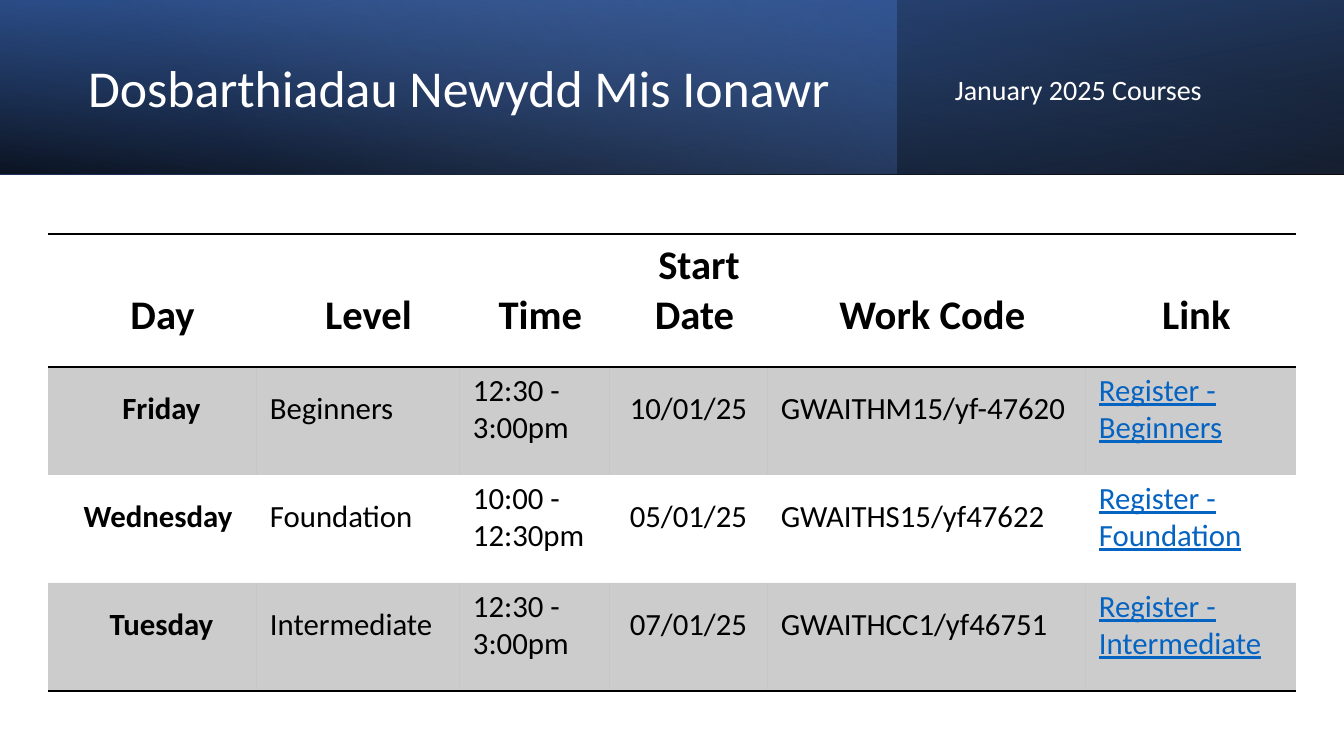
from lxml.etree import SubElement
from pptx import Presentation
from pptx.dml.color import RGBColor
from pptx.enum.shapes import MSO_SHAPE
from pptx.enum.text import MSO_ANCHOR, MSO_AUTO_SIZE, PP_ALIGN
from pptx.oxml import parse_xml
from pptx.oxml.ns import nsdecls, qn
from pptx.util import Pt

PX = 914400 / 100.8
COLORS = {"black": "000000", "white": "FFFFFF", "navy": "2F5597",
          "blue": "4472C4", "pale": "8FAADC", "link": "0563C1"}
NO_STYLE = "{2D5ABB26-0587-4C30-8999-92F81FD0307C}"


def box(*lengths):
    return [round(length * PX) for length in lengths]


def write(frame, text, size, color, align=PP_ALIGN.LEFT, **formats):
    frame.word_wrap = True
    paragraph = frame.paragraphs[0]
    paragraph.alignment = align
    run = paragraph.add_run()
    run.text = text
    run.font.color.rgb = RGBColor.from_string(COLORS[color])
    for name, value in {"name": "Calibri", "size": Pt(size), **formats}.items():
        setattr(run.font, name, value)
    return paragraph


presentation = Presentation()
presentation.slide_width, presentation.slide_height = box(1344, 756)
slide = presentation.slides.add_slide(presentation.slide_layouts[5])
shapes = slide.shapes

bands = [
    (1344, 180, True, 100, [(0, "black", 96), (100, "navy", 100)]),
    (897, 0, False, 140, [(0, "blue", 41), (74, "pale", 0)]),
    (1344, 0, True, 260, [(0, "black", 63), (78, "blue", 15)]),
]
for width, rotation, flipped, angle, stops in bands:
    band = shapes.add_shape(MSO_SHAPE.RECTANGLE, *box(0, 0, width, 174))
    band.shadow.inherit = False
    band.line.fill.background()
    band.rotation = rotation
    if flipped:
        band.element.spPr.find(qn("a:xfrm")).set("flipH", "1")
    stop_xml = "".join(
        f'<a:gs pos="{position * 1000}"><a:srgbClr val="{COLORS[color]}">'
        f'<a:alpha val="{alpha * 1000}"/></a:srgbClr></a:gs>'
        for position, color, alpha in stops)
    gradient = parse_xml(
        f'<a:gradFill {nsdecls("a")} rotWithShape="1"><a:gsLst>{stop_xml}</a:gsLst>'
        f'<a:lin ang="{angle * 60000}" scaled="0"/></a:gradFill>')
    band.element.spPr.find(qn("a:prstGeom")).addnext(gradient)

title = shapes.title
title.left, title.top, title.width, title.height = box(78, 27, 778, 128)
shapes.element.append(title.element)
subtitle = shapes.add_textbox(*box(945, 43, 357, 97))
for shape, text, size in [(title, "Dosbarthiadau Newydd Mis Ionawr", 37),
                          (subtitle, "January 2025 Courses", 20)]:
    shape.text_frame.auto_size = MSO_AUTO_SIZE.NONE
    shape.text_frame.vertical_anchor = MSO_ANCHOR.MIDDLE
    write(shape.text_frame, text, size, "white").line_spacing = 0.9

courses = [
    [" Day", " Level", "Time", " Start Date", "Work Code", "Link"],
    [" Friday", "Beginners", "12:30 - 3:00pm", " 10/01/25",
     "GWAITHM15/yf-47620", "Register - Beginners"],
    [" Wednesday ", "Foundation", "10:00 - 12:30pm", " 05/01/25",
     "GWAITHS15/yf47622", "Register - Foundation"],
    [" Tuesday", "Intermediate", "12:30 - 3:00pm", " 07/01/25",
     "GWAITHCC1/yf46751", "Register - Intermediate"],
]
column_widths = box(209, 203, 150, 158, 318, 210)
row_heights = box(133, 108, 108, 108)
borders = {0: ["lnT", "lnB"], 3: ["lnB"]}
margins = dict(zip(["margin_left", "margin_top", "margin_right", "margin_bottom"],
                   box(13, 4, 2, 27)))

table_frame = shapes.add_table(4, 6, *box(48, 234, 1248, 457))
table_frame.element.xpath(".//a:tableStyleId")[0].text = NO_STYLE
table = table_frame.table
table.first_row = table.horz_banding = False
for column, width in zip(table.columns, column_widths):
    column.width = width

for row_index, course in enumerate(courses):
    table.rows[row_index].height = row_heights[row_index]
    header = row_index == 0
    for column_index, text in enumerate(course):
        cell = table.cell(row_index, column_index)
        for name, value in margins.items():
            setattr(cell, name, value)
        cell.vertical_anchor = MSO_ANCHOR.BOTTOM if header else MSO_ANCHOR.MIDDLE
        heading = header or column_index == 0
        link = column_index == 5 and not header
        write(cell.text_frame, text, 29 if header else 22,
              "link" if link else "black",
              PP_ALIGN.CENTER if heading else PP_ALIGN.LEFT,
              bold=heading, underline=link)
        properties = cell._tc.get_or_add_tcPr()
        if row_index % 2:
            cell.fill.solid()
            cell.fill.fore_color.rgb = RGBColor.from_string(COLORS["black"])
            SubElement(properties.find(".//" + qn("a:srgbClr")),
                       qn("a:alpha"), val="20000")
        else:
            cell.fill.background()
        for position, side in enumerate(borders.get(row_index, [])):
            properties.insert(position, parse_xml(
                f'<a:{side} {nsdecls("a")} w="12700"><a:solidFill>'
                f'<a:srgbClr val="{COLORS["black"]}"/></a:solidFill></a:{side}>'))

presentation.save("out.pptx")
